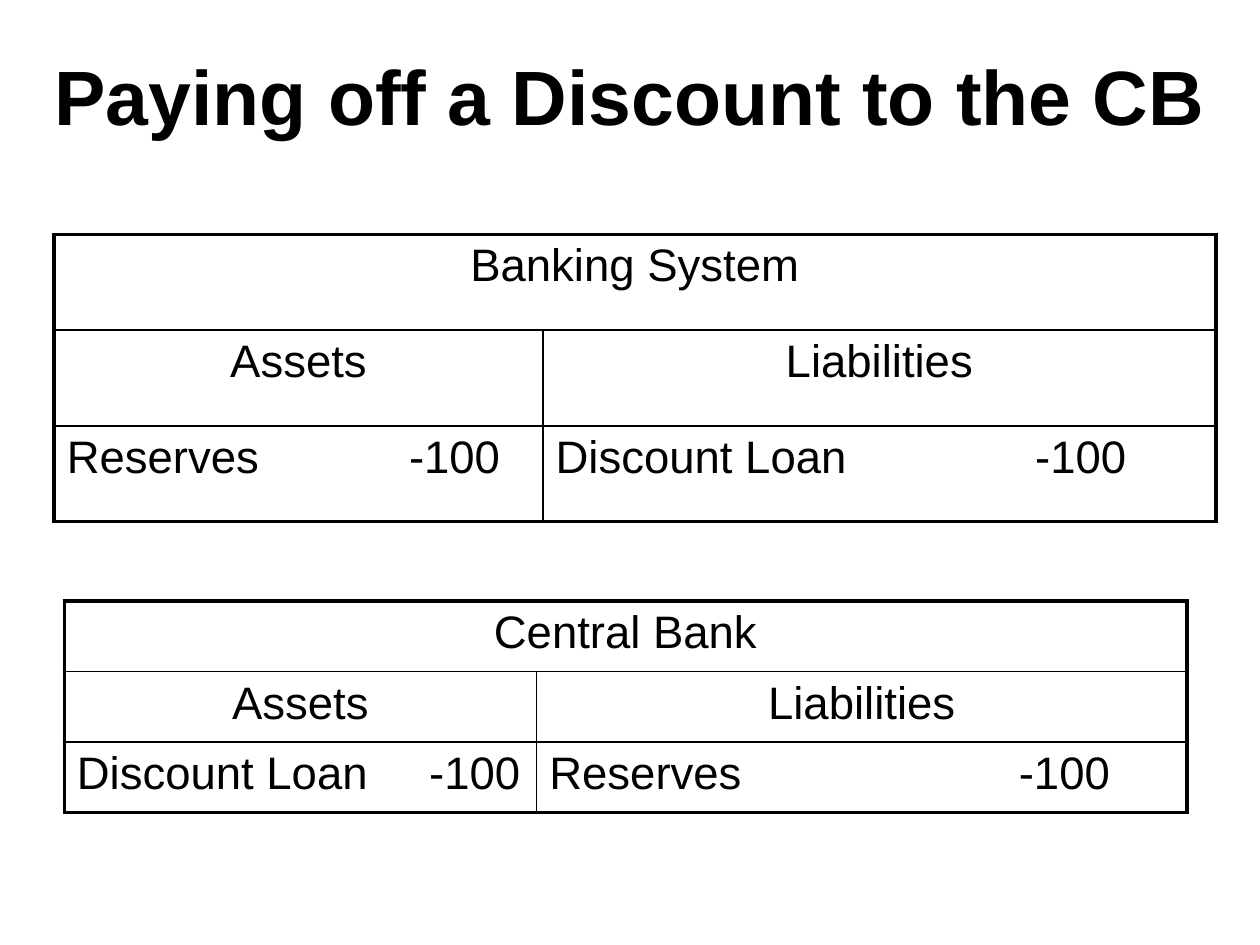
import pptx
import pptx.util
import pptx.dml.color
import pptx.enum.text
import pptx.oxml
import pptx.oxml.ns
import lxml.etree

Inches = pptx.util.Inches
Pt = pptx.util.Pt
ALIGN = pptx.enum.text.PP_ALIGN
BLACK = pptx.dml.color.RGBColor(0, 0, 0)
FONT = "Arial"
THICK = 2.25
THIN = 1


def style(para, size, bold=False):
    for run in para.runs:
        run.font.name = FONT
        run.font.size = Pt(size)
        run.font.bold = bold
        run.font.color.rgb = BLACK


def add_title(slide, text):
    box = slide.shapes.add_textbox(Inches(0.2), Inches(0.13), Inches(9.61), Inches(1.25))
    frame = box.text_frame
    frame.word_wrap = True
    frame.vertical_anchor = pptx.enum.text.MSO_ANCHOR.MIDDLE
    frame.text = text
    para = frame.paragraphs[0]
    para.alignment = ALIGN.CENTER
    style(para, 44, True)


def add_tab(para, stop):
    qn = pptx.oxml.ns.qn
    tabs = lxml.etree.SubElement(para._p.get_or_add_pPr(), qn("a:tabLst"))
    lxml.etree.SubElement(tabs, qn("a:tab"), pos=str(Inches(stop)), algn="r")


def set_edges(cell, edges):
    props = cell._tc.get_or_add_tcPr()
    for spot, (side, width) in enumerate(edges.items()):
        line = pptx.oxml.parse_xml(
            f'<a:ln{side} {pptx.oxml.ns.nsdecls("a")} w="{Pt(width)}">'
            f'<a:solidFill><a:srgbClr val="{BLACK}"/></a:solidFill></a:ln{side}>'
        )
        props.insert(spot, line)


def fill_cell(cell, text, stop=None):
    cell.text = text
    para = cell.text_frame.paragraphs[0]
    if stop:
        add_tab(para, stop)
    else:
        para.alignment = ALIGN.CENTER
    style(para, 26)


def add_sheet(slide, left, top, widths, height, name, items, stops):
    shape = slide.shapes.add_table(
        3, 2, Inches(left), Inches(top), Inches(sum(widths)), Inches(3 * height)
    )
    table = shape.table
    table.first_row = False
    table.horz_banding = False
    for col, width in zip(table.columns, widths):
        col.width = Inches(width)
    for row in table.rows:
        row.height = Inches(height)

    for r in range(3):
        for c in range(2):
            cell = table.cell(r, c)
            cell.margin_left = cell.margin_right = Inches(0.1)
            cell.margin_top = cell.margin_bottom = Inches(0.05)
            cell.fill.background()
            inner = THICK if r == 0 else THIN
            set_edges(cell, {
                "L": THICK if c == 0 else inner,
                "R": THICK if c == 1 else inner,
                "T": THICK if r == 0 else THIN,
                "B": THICK if r == 2 else THIN,
            })

    table.cell(0, 0).merge(table.cell(0, 1))
    fill_cell(table.cell(0, 0), name)
    for c, head in enumerate(("Assets", "Liabilities")):
        fill_cell(table.cell(1, c), head)
        fill_cell(table.cell(2, c), f"{items[c]}\t-100", stops[c])


def main():
    deck = pptx.Presentation()
    deck.slide_width = Inches(10)
    deck.slide_height = Inches(7.5)
    slide = deck.slides.add_slide(deck.slide_layouts[6])
    add_title(slide, "Paying off a Discount to the CB")
    add_sheet(slide, 0.43, 1.86, (3.88, 5.34), 0.76, "Banking System",
              ("Reserves", "Discount Loan"), (3.44, 4.53))
    add_sheet(slide, 0.51, 4.77, (3.75, 5.16), 0.56, "Central Bank",
              ("Discount Loan", "Reserves"), (3.52, 4.45))
    deck.save("out.pptx")


if __name__ == "__main__":
    main()
